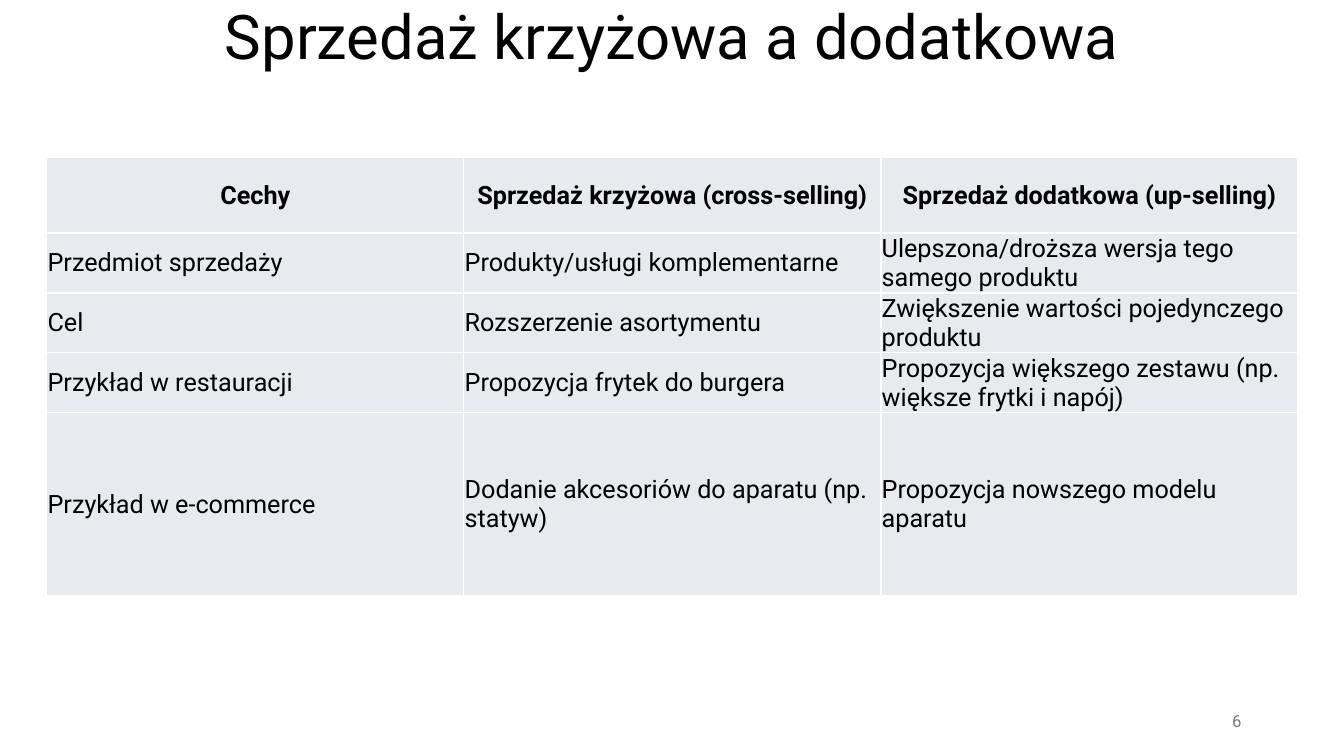
import pptx
import pptx.dml.color
import pptx.enum.text
import pptx.oxml
import pptx.oxml.ns
import pptx.util

Cm, Pt = pptx.util.Cm, pptx.util.Pt
ALIGN = pptx.enum.text.PP_ALIGN
MIDDLE = pptx.enum.text.MSO_ANCHOR.MIDDLE

ROWS = [
    ["Cechy", "Sprzedaż krzyżowa (cross-selling)", "Sprzedaż dodatkowa (up-selling)"],
    ["Przedmiot sprzedaży", "Produkty/usługi komplementarne",
     "Ulepszona/droższa wersja tego samego produktu"],
    ["Cel", "Rozszerzenie asortymentu", "Zwiększenie wartości pojedynczego produktu"],
    ["Przykład w restauracji", "Propozycja frytek do burgera",
     "Propozycja większego zestawu (np. większe frytki i napój)"],
    ["Przykład w e-commerce", "Dodanie akcesoriów do aparatu (np. statyw)",
     "Propozycja nowszego modelu aparatu"],
]
ROW_HEIGHTS = [1.9, 1.51, 1.51, 1.51, 4.6]


def rgb(value):
    return pptx.dml.color.RGBColor.from_string(value)


class Deck:
    font = "Roboto"
    text_color = "000000"
    cell_fill = "E8EAED"
    border = "FFFFFF"

    def __init__(self, width, height):
        self.prs = pptx.Presentation()
        self.prs.slide_width, self.prs.slide_height = Cm(width), Cm(height)

    def add_slide(self):
        self.s = self.prs.slides.add_slide(self.prs.slide_layouts[5])

    def set_text(self, tf, text, size, align, color=None, bold=False):
        tf.word_wrap = True
        tf.vertical_anchor = MIDDLE
        p = tf.paragraphs[0]
        p.text = text
        p.alignment = align
        p.font.name, p.font.size, p.font.bold = self.font, Pt(size), bold
        p.font.color.rgb = rgb(color or self.text_color)
        return p

    def title(self, text, box):
        sp = self.s.shapes.title
        sp.left, sp.top, sp.width, sp.height = map(Cm, box)
        sp.text_frame.auto_size = pptx.enum.text.MSO_AUTO_SIZE.NONE
        self.set_text(sp.text_frame, text, 44, ALIGN.CENTER).line_spacing = 0.9

    def text(self, text, box, size, align, color):
        sp = self.s.shapes.add_textbox(*map(Cm, box))
        self.set_text(sp.text_frame, text, size, align, color)

    def cell_borders(self, cell):
        """Draw a 1 pt line on all four sides; lines must precede the fill."""
        tc_pr = cell._tc.get_or_add_tcPr()
        for i, side in enumerate(("lnL", "lnR", "lnT", "lnB")):
            tc_pr.insert(i, pptx.oxml.parse_xml(
                f'<a:{side} {pptx.oxml.ns.nsdecls("a")} w="{Pt(1)}"><a:solidFill>'
                f'<a:srgbClr val="{self.border}"/></a:solidFill></a:{side}>'))

    def table(self, rows, heights, left, top, width):
        shape = self.s.shapes.add_table(len(rows), len(rows[0]), Cm(left), Cm(top),
                                        Cm(width), Cm(sum(heights)))
        table = shape.table
        for row, height in zip(table.rows, heights):
            row.height = Cm(height)
        for i, row in enumerate(rows):
            for j, text in enumerate(row):
                cell = table.cell(i, j)
                cell.margin_left = cell.margin_right = cell.margin_top = Cm(0.02)
                cell.margin_bottom = 0
                cell.vertical_anchor = MIDDLE
                cell.fill.solid()
                cell.fill.fore_color.rgb = rgb(self.cell_fill)
                self.cell_borders(cell)
                header = i == 0
                self.set_text(cell.text_frame, text, 18,
                              ALIGN.CENTER if header else ALIGN.LEFT, bold=header)


def main():
    deck = Deck(33.87, 19.05)
    deck.add_slide()
    deck.title("Sprzedaż krzyżowa a dodatkowa", (2.34, 0, 29.21, 1.98))
    deck.table(ROWS, ROW_HEIGHTS, 1.18, 3.97, 31.53)
    deck.text("6", (23.92, 17.66, 7.62, 1.01), 12, ALIGN.RIGHT, "797979")
    deck.prs.save("out.pptx")


if __name__ == "__main__":
    main()
